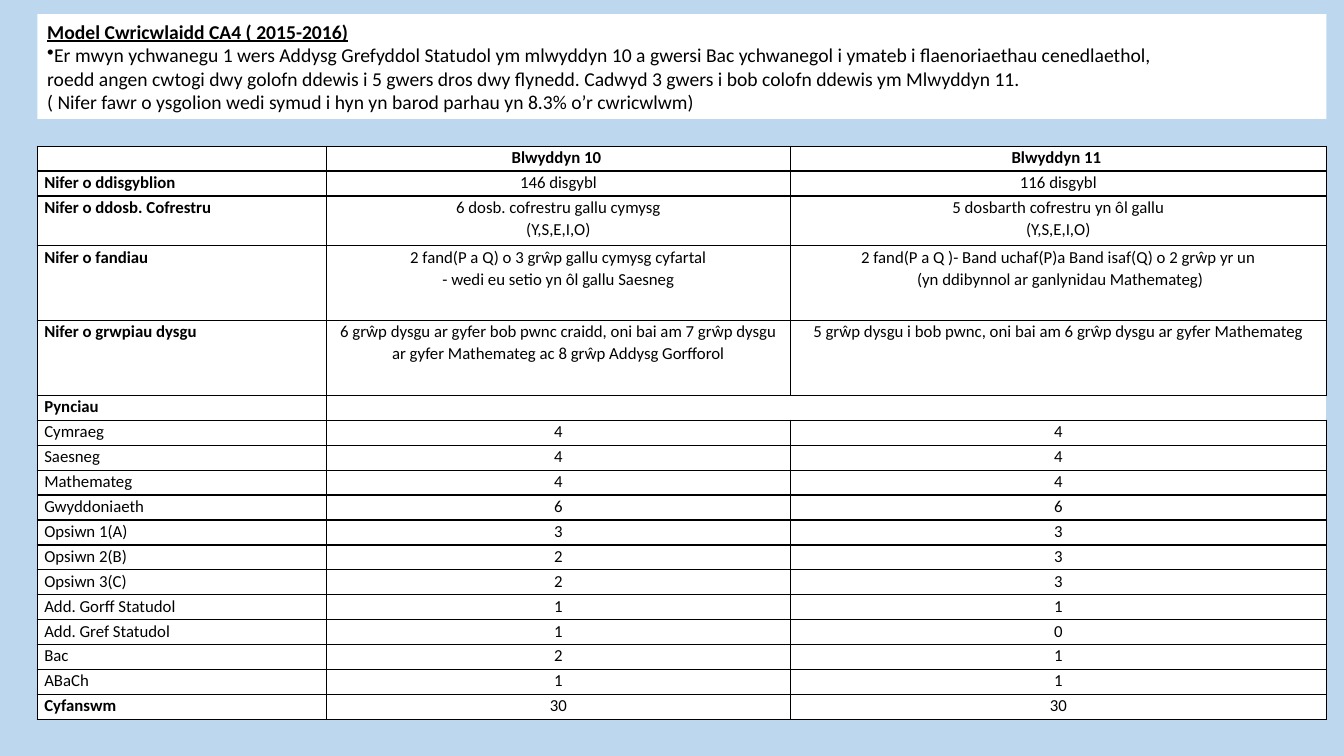
from dataclasses import dataclass

import lxml.etree
import pptx
import pptx.dml.color
import pptx.enum.shapes
import pptx.enum.text
import pptx.oxml
import pptx.oxml.ns
import pptx.presentation
import pptx.slide
import pptx.table
import pptx.text.text
import pptx.util

Pt = pptx.util.Pt
RGBColor = pptx.dml.color.RGBColor
Align = pptx.enum.text.PP_ALIGN
qn = pptx.oxml.ns.qn

BLACK = RGBColor(0x00, 0x00, 0x00)
WHITE = RGBColor(0xFF, 0xFF, 0xFF)
PALE_BLUE = RGBColor(0xBD, 0xD7, 0xEE)

FONT = "Calibri"
LEFT, WIDTH = 26.64, 920.88
HEADING_TOP, HEADING_HEIGHT = 10.08, 74.88
TABLE_TOP = 104.4
COLUMN_WIDTHS = (206.64, 331.2, 383.04)
LINE_HEIGHT = 17.81
HEADING_SIZE, TABLE_SIZE = 14, 12

HEADING = "Model Cwricwlaidd CA4 ( 2015-2016)"
EXPLANATION = (
    "Er mwyn ychwanegu 1 wers Addysg Grefyddol Statudol ym mlwyddyn 10 "
    "a gwersi Bac ychwanegol i ymateb i flaenoriaethau cenedlaethol, ",
    "roedd angen cwtogi dwy golofn ddewis i 5 gwers dros dwy flynedd. "
    "Cadwyd 3 gwers i bob colofn ddewis ym Mlwyddyn 11.",
    "( Nifer fawr o ysgolion wedi symud i hyn yn barod parhau yn 8.3% o’r cwricwlwm)",
)


@dataclass(frozen=True)
class CurriculumRow:
    """One table row; each newline in a year's text starts a paragraph."""
    label: str
    year_10: str = ""
    year_11: str = ""
    bold_label: bool = False
    bold_years: bool = False
    lines: int = 1
    merged: bool = False


ROWS = (
    CurriculumRow("", "Blwyddyn 10 ", "Blwyddyn 11 ", bold_years=True),
    CurriculumRow("Nifer o ddisgyblion", "146 disgybl", "116 disgybl", True),
    CurriculumRow("Nifer o ddosb. Cofrestru",
                  "6 dosb. cofrestru gallu cymysg\n(Y,S,E,I,O)",
                  "5 dosbarth cofrestru yn ôl gallu\n(Y,S,E,I,O)", True, lines=2),
    CurriculumRow("Nifer o fandiau",
                  "2 fand(P a Q) o 3 grŵp gallu cymysg cyfartal\n"
                  "- wedi eu setio yn ôl gallu Saesneg",
                  "2 fand(P a Q )- Band uchaf(P)a Band isaf(Q) o 2 grŵp yr un\n"
                  " (yn ddibynnol ar ganlynidau Mathemateg)", True, lines=3),
    CurriculumRow("Nifer o grwpiau dysgu",
                  "6 grŵp dysgu ar gyfer bob pwnc craidd, oni bai am 7 grŵp dysgu "
                  "ar gyfer Mathemateg ac 8 grŵp Addysg Gorfforol",
                  "5 grŵp dysgu i bob pwnc, oni bai am 6 grŵp dysgu "
                  "ar gyfer Mathemateg", True, lines=3),
    CurriculumRow("Pynciau", bold_label=True, merged=True),
    CurriculumRow("Cymraeg", "4", "4"),
    CurriculumRow("Saesneg", "4", "4"),
    CurriculumRow("Mathemateg", "4", "4"),
    CurriculumRow("Gwyddoniaeth", "6", "6"),
    CurriculumRow("Opsiwn 1(A)", "3", "3"),
    CurriculumRow("Opsiwn 2(B)", "2", "3"),
    CurriculumRow("Opsiwn 3(C)", "2", "3"),
    CurriculumRow("Add. Gorff Statudol", "1", "1"),
    CurriculumRow("Add. Gref Statudol", "1", "0"),
    CurriculumRow("Bac", "2", "1"),
    CurriculumRow("ABaCh", "1", "1"),
    CurriculumRow("Cyfanswm", "30", "30", True),
)


def add_run(paragraph: pptx.text.text._Paragraph, text: str, size: float,
            bold: bool = False, underline: bool = False) -> None:
    run = paragraph.add_run()
    run.text = text
    run.font.name = FONT
    run.font.size = Pt(size)
    run.font.bold = bold
    run.font.underline = underline
    run.font.color.rgb = BLACK


def set_borders(cell: pptx.table._Cell, open_right: bool) -> None:
    """Rule the cell's four sides, leaving the right one bare if open_right."""
    properties = cell._tc.get_or_add_tcPr()
    for side in ("lnL", "lnR", "lnT", "lnB"):
        line = lxml.etree.SubElement(properties, qn(f"a:{side}"), w=str(Pt(1)))
        if open_right and side == "lnR":
            lxml.etree.SubElement(line, qn("a:noFill"))
        else:
            fill = lxml.etree.SubElement(line, qn("a:solidFill"))
            lxml.etree.SubElement(fill, qn("a:srgbClr"), val=str(BLACK))


def fill_cell(cell: pptx.table._Cell, text: str, bold: bool, align: Align,
              open_right: bool) -> None:
    set_borders(cell, open_right)
    cell.fill.solid()
    cell.fill.fore_color.rgb = WHITE
    cell.margin_left = cell.margin_right = Pt(5)
    cell.margin_top = cell.margin_bottom = 0
    for index, words in enumerate(text.split("\n")):
        frame = cell.text_frame
        paragraph = frame.add_paragraph() if index else frame.paragraphs[0]
        paragraph.alignment = align
        paragraph.line_spacing = 1.07
        if words:
            add_run(paragraph, words, TABLE_SIZE, bold)
        else:  # keeps an empty cell from stretching its row
            lxml.etree.SubElement(paragraph._p, qn("a:endParaRPr"),
                                  sz=str(TABLE_SIZE * 100))


def add_curriculum_table(slide: pptx.slide.Slide) -> None:
    height = LINE_HEIGHT * sum(row.lines for row in ROWS)
    table = slide.shapes.add_table(
        len(ROWS), len(COLUMN_WIDTHS), Pt(LEFT), Pt(TABLE_TOP), Pt(WIDTH), Pt(height)
    ).table
    table.first_row = table.horz_banding = False
    for column, width in zip(table.columns, COLUMN_WIDTHS):
        column.width = Pt(width)
    for index, row in enumerate(ROWS):
        table.rows[index].height = Pt(LINE_HEIGHT * row.lines)
        fill_cell(table.cell(index, 0), row.label, row.bold_label, Align.LEFT, False)
        for column, text in enumerate((row.year_10, row.year_11), start=1):
            fill_cell(table.cell(index, column), text, row.bold_years,
                      Align.CENTER, row.merged)
        if row.merged:
            table.cell(index, 1).merge(table.cell(index, 2))


def add_heading(slide: pptx.slide.Slide) -> None:
    box = slide.shapes.add_shape(
        pptx.enum.shapes.MSO_SHAPE.RECTANGLE,
        Pt(LEFT), Pt(HEADING_TOP), Pt(WIDTH), Pt(HEADING_HEIGHT))
    box.shadow.inherit = False
    box.fill.solid()
    box.fill.fore_color.rgb = WHITE
    box.line.fill.background()
    frame = box.text_frame
    frame.word_wrap = True
    frame.vertical_anchor = pptx.enum.text.MSO_ANCHOR.MIDDLE
    title = frame.paragraphs[0]
    title.alignment = Align.LEFT
    add_run(title, HEADING, HEADING_SIZE, bold=True, underline=True)

    explanation = frame.add_paragraph()
    explanation.alignment = Align.LEFT
    lxml.etree.SubElement(explanation._p.get_or_add_pPr(), qn("a:buChar"), char="•")
    for index, line in enumerate(EXPLANATION):
        if index:
            explanation.add_line_break()
        add_run(explanation, line, HEADING_SIZE)
    for line_break in explanation._p.findall(qn("a:br")):
        lxml.etree.SubElement(line_break, qn("a:rPr"), sz=str(HEADING_SIZE * 100))


def main() -> None:
    presentation = pptx.Presentation()
    presentation.slide_width = Pt(960)
    presentation.slide_height = Pt(540)
    slide = presentation.slides.add_slide(presentation.slide_layouts[6])
    slide.background.fill.solid()
    slide.background.fill.fore_color.rgb = PALE_BLUE
    add_curriculum_table(slide)
    add_heading(slide)
    presentation.save("out.pptx")


if __name__ == "__main__":
    main()
